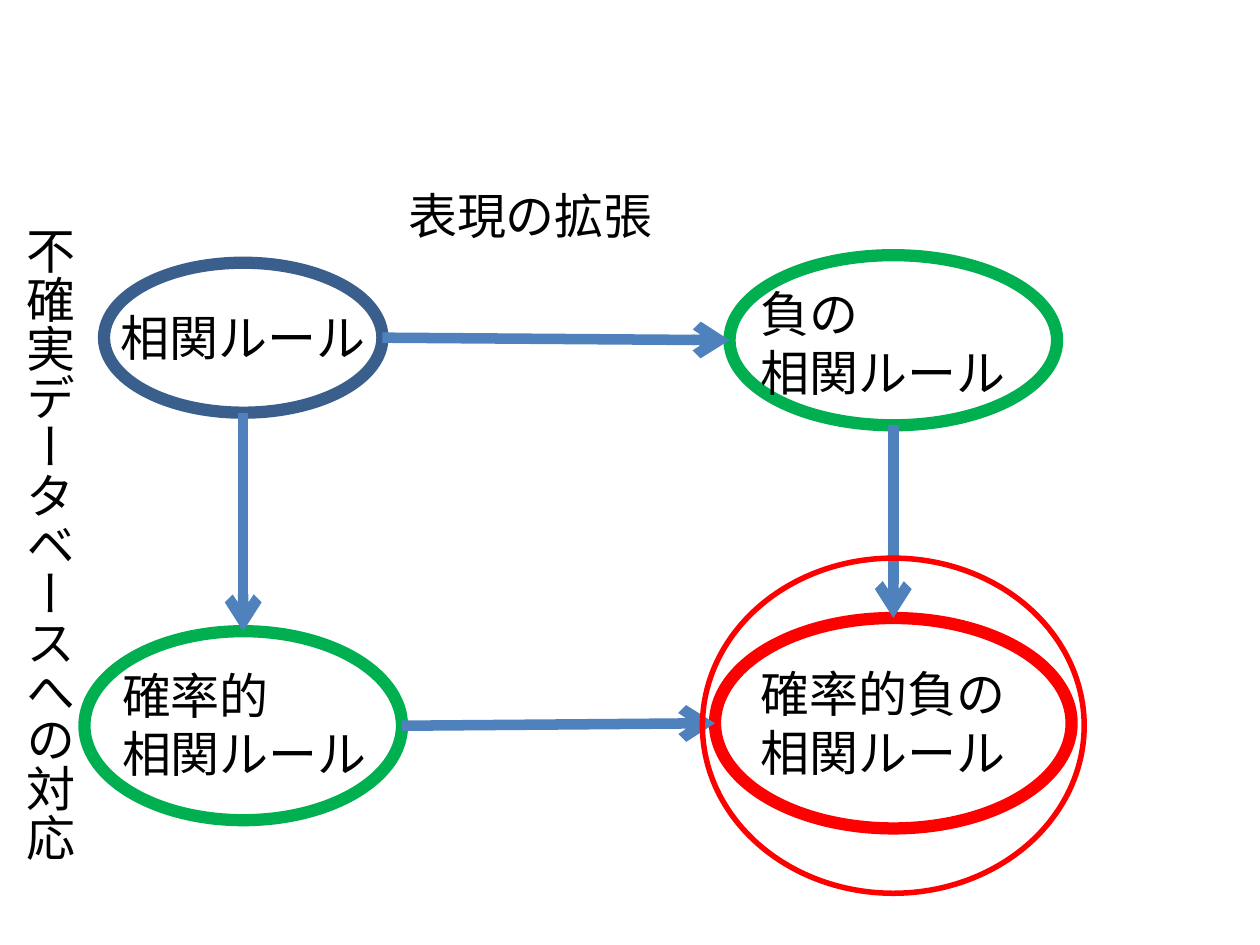
from dataclasses import dataclass

from lxml.etree import SubElement
from pptx import Presentation
from pptx.dml.color import RGBColor
from pptx.enum.shapes import MSO_CONNECTOR as Connector, MSO_SHAPE as Preset
from pptx.enum.text import MSO_AUTO_SIZE as AutoSize, PP_ALIGN as Align
from pptx.oxml.ns import qn
from pptx.slide import Slide
from pptx.util import Emu, Inches, Pt


@dataclass(frozen=True)
class Theme:
    font: str = "Karla"
    text_size: float = 28
    ring_width: float = 7
    halo_width: float = 3.15
    arrow_width: float = 6
    text: str = "000000"
    paper: str = "FFFFFF"
    base: str = "3A5F8C"
    extended: str = "00B050"
    goal: str = "FF0000"
    arrow: str = "4F81BD"


@dataclass(frozen=True)
class Ring:
    """An ellipse given by its centre and size in grid units."""
    x: float
    y: float
    width: float
    height: float
    color: str

    @property
    def right(self) -> tuple[float, float]:
        return self.x + self.width / 2, self.y

    @property
    def left(self) -> tuple[float, float]:
        return self.x - self.width / 2, self.y

    @property
    def top(self) -> tuple[float, float]:
        return self.x, self.y - self.height / 2

    @property
    def bottom(self) -> tuple[float, float]:
        return self.x, self.y + self.height / 2


@dataclass(frozen=True)
class Label:
    text: str
    left: float
    top: float
    width: float
    height: float
    align: Align = Align.LEFT
    vertical: bool = False


THEME = Theme()
WIDTH, HEIGHT = Inches(10), Inches(7.5)
COLUMNS = 10  # square grid: ten columns across the slide
LEFT_COLUMN, RIGHT_COLUMN = 1.93, 7.09

# Rule types: plain, negative, probabilistic, probabilistic negative
PLAIN = Ring(LEFT_COLUMN, 2.68, 2.21, 1.19, THEME.base)
NEGATIVE = Ring(RIGHT_COLUMN, 2.7, 2.6, 1.35, THEME.extended)
PROBABILISTIC = Ring(LEFT_COLUMN, 5.76, 2.52, 1.5, THEME.extended)
COMBINED = Ring(RIGHT_COLUMN, 5.74, 2.83, 1.67, THEME.goal)
HALO = Ring(RIGHT_COLUMN, 5.76, 3.03, 2.66, THEME.goal)

ARROWS = (
    (PLAIN.bottom, PROBABILISTIC.top),
    (PLAIN.right, NEGATIVE.left),
    (NEGATIVE.bottom, COMBINED.top),
    (PROBABILISTIC.right, COMBINED.left),
)

LABELS = (
    Label("不確実データベースへの対応", 0, 1.7, 0.67, 5.31, vertical=True),
    Label("表現の拡張", 2.44, 1.42, 3.54, 0.57, Align.CENTER),
    Label("相関ルール", 0.7, 2.39, 2.46, 0.57, Align.CENTER),
    Label("負の\n相関ルール", 5.94, 2.2, 2.36, 1.04),
    Label("確率的\n相関ルール", 0.87, 5.23, 2.32, 1.04),
    Label("確率的負の\n相関ルール", 5.94, 5.22, 2.59, 1.04),
)


def grid(*units: float) -> list[Emu]:
    return [Emu(round(WIDTH * unit / COLUMNS)) for unit in units]


def color(code: str) -> RGBColor:
    return RGBColor.from_string(code)


def draw_ring(page: Slide, ring: Ring, line_width: float, filled: bool = True) -> None:
    shape = page.shapes.add_shape(
        Preset.OVAL, *grid(ring.left[0], ring.top[1], ring.width, ring.height))
    shape.shadow.inherit = False
    if filled:
        shape.fill.solid()
        shape.fill.fore_color.rgb = color(THEME.paper)
    else:
        shape.fill.background()
    shape.line.color.rgb = color(ring.color)
    shape.line.width = Pt(line_width)


def draw_arrow(page: Slide, start: tuple[float, float], end: tuple[float, float]) -> None:
    arrow = page.shapes.add_connector(Connector.STRAIGHT, *grid(*start, *end))
    arrow.line.color.rgb = color(THEME.arrow)
    arrow.line.width = Pt(THEME.arrow_width)
    SubElement(arrow.line._get_or_add_ln(), qn("a:tailEnd"), type="arrow")
    SubElement(arrow._element.spPr, qn("a:effectLst"))


def draw_label(page: Slide, label: Label) -> None:
    box = page.shapes.add_textbox(*grid(label.left, label.top, label.width, label.height))
    frame = box.text_frame
    frame.word_wrap = True
    frame.auto_size = AutoSize.SHAPE_TO_FIT_TEXT
    if label.vertical:
        frame._txBody.bodyPr.set("vert", "eaVert")
    frame.text = label.text
    for para in frame.paragraphs:
        para.alignment = label.align
        for span in para.runs:
            span.font.name = THEME.font
            span.font.size = Pt(THEME.text_size)
            span.font.color.rgb = color(THEME.text)


def main() -> None:
    deck = Presentation()
    deck.slide_width, deck.slide_height = WIDTH, HEIGHT
    page = deck.slides.add_slide(deck.slide_layouts[6])

    # Rule types and the steps between them
    for ring in (PLAIN, NEGATIVE, PROBABILISTIC, COMBINED):
        draw_ring(page, ring, THEME.ring_width)
    for start, end in ARROWS:
        draw_arrow(page, start, end)

    # Names of the rules and of the two directions
    for label in LABELS:
        draw_label(page, label)

    # Emphasis on the goal
    draw_ring(page, HALO, THEME.halo_width, filled=False)

    deck.save("out.pptx")


if __name__ == "__main__":
    main()
